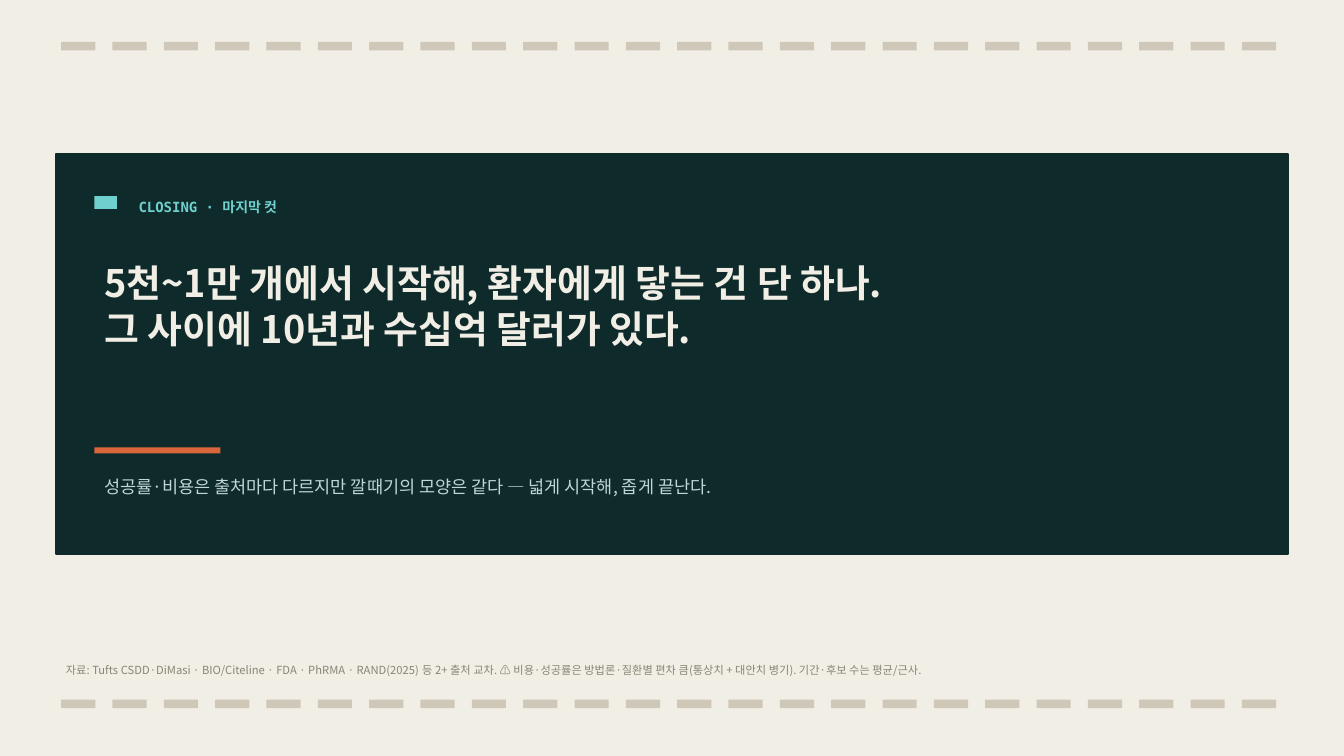
from dataclasses import dataclass

from pptx import Presentation
from pptx.dml.color import RGBColor
from pptx.enum.shapes import MSO_SHAPE
from pptx.enum.text import MSO_ANCHOR, MSO_AUTO_SIZE, PP_ALIGN
from pptx.oxml.ns import qn
from pptx.util import Inches, Pt


@dataclass(frozen=True)
class Theme:
    paper: str = "F1EEE6"
    dash: str = "CFC8B8"
    panel: str = "0E2A2A"
    teal: str = "6FD0CE"
    mist: str = "BFD6D4"
    rust: str = "D9663B"
    muted: str = "8A8474"
    sans: str = "Noto Sans CJK KR"
    mono: str = "DejaVu Sans Mono"
    title_size: float = 27
    lead_size: float = 12.5
    kicker_size: float = 10
    source_size: float = 8


THEME = Theme()


@dataclass(frozen=True)
class Box:
    left: float
    top: float
    width: float
    height: float

    def share(self, left, top, width, height):
        return Box(
            self.left + self.width * left / 100,
            self.top + self.height * top / 100,
            self.width * width / 100,
            self.height * height / 100,
        )

    def emu(self):
        return [Inches(side) for side in (self.left, self.top, self.width, self.height)]


def add_block(page, box, color, outline=None):
    block = page.shapes.add_shape(MSO_SHAPE.RECTANGLE, *box.emu())
    block.shadow.inherit = False
    block.fill.solid()
    block.fill.fore_color.rgb = RGBColor.from_string(color)
    if outline:
        block.line.color.rgb = RGBColor.from_string(color)
        block.line.width = Pt(outline)
    else:
        block.line.fill.background()


def write(shape, box, lines, color, size, font=THEME.sans, bold=False, wrap=True):
    sides = zip(("left", "top", "width", "height"), box.emu())
    for name, value in sides:
        setattr(shape, name, value)
    frame = shape.text_frame
    frame_format = {
        "word_wrap": wrap,
        "auto_size": MSO_AUTO_SIZE.NONE,
        "vertical_anchor": MSO_ANCHOR.TOP,
    }
    for name, value in frame_format.items():
        setattr(frame, name, value)
    frame.text = "\n".join(lines)
    for para in frame.paragraphs:
        para.alignment = PP_ALIGN.LEFT
        para.space_before = Pt(0)
        for span in para.runs:
            for name, value in {"name": font, "size": Pt(size), "bold": bold}.items():
                setattr(span.font, name, value)
            span.font.color.rgb = RGBColor.from_string(color)
            latin = span.font._element.find(qn("a:latin"))
            asian = latin.makeelement(qn("a:ea"), {"typeface": THEME.sans})
            latin.addnext(asian)


def add_text(page, box, lines, color, size, **style):
    write(page.shapes.add_textbox(*box.emu()), box, lines, color, size, **style)


def dashed_band(page, box, count=24):
    pitch = 100 / count
    for index in range(count):
        add_block(page, box.share((index + 0.1) * pitch, 0, pitch * 2 / 3, 100), THEME.dash)


def closing_panel(page, box):
    add_block(page, box, THEME.panel, outline=1.5)
    add_block(page, box.share(3.11, 10.5, 1.84, 3.15), THEME.teal)
    add_text(page, box.share(5.89, 9.82, 13.18, 6.8), ["CLOSING · 마지막 컷"],
             THEME.teal, THEME.kicker_size, font=THEME.mono, bold=True, wrap=False)
    write(page.shapes.title, box.share(3.11, 25.19, 93.62, 25.44),
          ["5천~1만 개에서 시작해, 환자에게 닿는 건 단 하나.",
           "그 사이에 10년과 수십억 달러가 있다."],
          THEME.paper, THEME.title_size, bold=True)
    add_block(page, box.share(3.11, 73.3, 10.23, 1.51), THEME.rust)
    write(page.placeholders[1], box.share(3.11, 79.09, 93.62, 7.81),
          ["성공률·비용은 출처마다 다르지만 깔때기의 모양은 같다 — 넓게 시작해, 좁게 끝난다."],
          THEME.mist, THEME.lead_size)


def source_line(page, box):
    add_text(page, box,
             ["자료: Tufts CSDD·DiMasi · BIO/Citeline · FDA · PhRMA · RAND(2025) 등 2+ 출처 교차. "
              "⚠ 비용·성공률은 방법론·질환별 편차 큼(통상치 + 대안치 병기). "
              "기간·후보 수는 평균/근사."],
             THEME.muted, THEME.source_size)


def closing_slide(deck, box):
    page = deck.slides.add_slide(deck.slide_layouts[0])
    page.background.fill.solid()
    page.background.fill.fore_color.rgb = RGBColor.from_string(THEME.paper)
    margin, span = 4.17, 91.67
    dashed_band(page, box.share(margin, 5.55, span, 1.11))
    closing_panel(page, box.share(margin, 20.4, span, 52.93))
    dashed_band(page, box.share(margin, 92.55, span, 1.11))
    source_line(page, box.share(margin, 87.07, span, 3.2))
    for shape in (page.shapes.title, page.placeholders[1]):
        page.shapes._spTree.append(shape._element)


def main():
    deck = Presentation()
    deck.slide_width, deck.slide_height = Inches(13.33), Inches(7.5)
    closing_slide(deck, Box(0, 0, 13.33, 7.5))
    deck.save("out.pptx")


if __name__ == "__main__":
    main()
